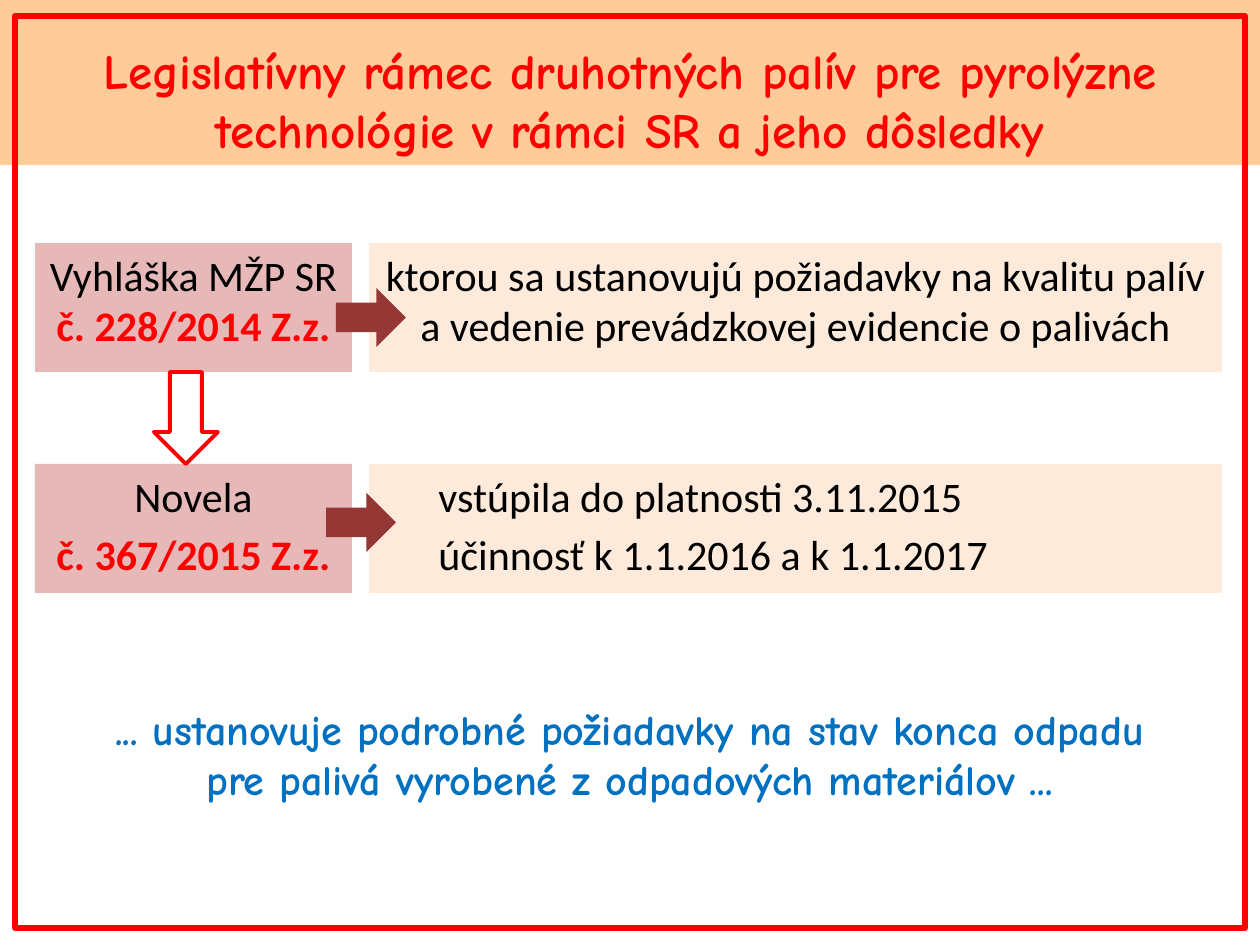
from dataclasses import dataclass

from lxml.etree import SubElement
from pptx import Presentation
from pptx.dml.color import RGBColor
from pptx.enum.shapes import MSO_SHAPE
from pptx.enum.text import MSO_ANCHOR, MSO_AUTO_SIZE, PP_ALIGN
from pptx.oxml.ns import qn
from pptx.util import Inches, Pt


@dataclass(frozen=True)
class Theme:
    red: str = "FF0000"
    blue: str = "0070C0"
    black: str = "000000"
    peach: str = "FFCC99"
    rose: str = "E6B9B8"
    cream: str = "FDEADA"
    brown: str = "953735"
    sans: str = "Calibri"
    comic: str = "Comic Neue"
    head: int = 28
    body: int = 24


LOOK = Theme()
PLAIN = dict(name=LOOK.sans, size=Pt(LOOK.body), bold=False, color=LOOK.black)
STRONG = PLAIN | dict(bold=True, color=LOOK.red)
TITLE = dict(name=LOOK.comic, size=Pt(LOOK.head), bold=True, color=LOOK.red)
NOTE = TITLE | dict(size=Pt(LOOK.body), color=LOOK.blue)

ROWS = (243, 464)
ACT_X, ACT_W = 35, 317
INFO_X, INFO_W = 369, 853
BOX_H = 129


def px(num):
    return round(num * Inches(1) / 126)


def place(shape, *box):
    for key, num in zip(("left", "top", "width", "height"), box):
        setattr(shape, key, px(num))


def paint(shape, color):
    shape.fill.solid()
    shape.fill.fore_color.rgb = RGBColor.from_string(color)


def style(font, form):
    for key, val in form.items():
        if key == "color":
            font.color.rgb = RGBColor.from_string(val)
        else:
            setattr(font, key, val)


def write(shape, paras, align=PP_ALIGN.CENTER, anchor=MSO_ANCHOR.TOP,
          before=4.8, indent=0):
    """Fill the shape with paragraphs, each a list of (text, format) runs."""
    frame = shape.text_frame
    form = dict(word_wrap=True, auto_size=MSO_AUTO_SIZE.NONE,
                vertical_anchor=anchor)
    for key, val in form.items():
        setattr(frame, key, val)
    for num, runs in enumerate(paras):
        para = frame.add_paragraph() if num else frame.paragraphs[0]
        para.alignment = align
        para.space_before = Pt(before)
        props = para._p.get_or_add_pPr()
        props.set("marL", str(px(indent)))
        props.set("indent", "0")
        SubElement(props, qn("a:buNone"))
        for text, look in runs:
            run = para.add_run()
            run.text = text
            style(run.font, look)


def add_form(slide, kind, box, fill=None, line=None, width=0):
    shape = slide.shapes.add_shape(kind, *map(px, box))
    shape.shadow.inherit = False
    if fill:
        paint(shape, fill)
    else:
        shape.fill.background()
    if line:
        shape.line.color.rgb = RGBColor.from_string(line)
        shape.line.width = Pt(width)
    else:
        shape.line.fill.background()
    return shape


def add_box(slide, box, fill, paras, **form):
    shape = add_form(slide, MSO_SHAPE.RECTANGLE, box, fill)
    write(shape, paras, **form)


def add_note(slide, box, text):
    write(slide.shapes.add_textbox(*map(px, box)), [[(text, NOTE)]])


def main():
    deck = Presentation()
    deck.slide_width, deck.slide_height = px(1260), px(945)
    slide = deck.slides.add_slide(deck.slide_layouts[1])
    title, act = slide.placeholders

    place(title, 0, 0, 1260, 165)
    paint(title, LOOK.peach)
    write(title, [[("Legislatívny rámec druhotných palív pre pyrolýzne "
                    "technológie v rámci SR a jeho dôsledky", TITLE)]],
          anchor=MSO_ANCHOR.BOTTOM, before=6)

    place(act, ACT_X, ROWS[0], ACT_W, BOX_H)
    paint(act, LOOK.rose)
    write(act, [[("Vyhláška MŽP SR ", PLAIN), ("č. 228/2014 Z.z.", STRONG)]])

    add_form(slide, MSO_SHAPE.RECTANGLE, (15, 16, 1230, 912),
             line=LOOK.red, width=3)
    add_box(slide, (ACT_X, ROWS[1], ACT_W, BOX_H), LOOK.rose,
            [[("Novela", PLAIN)], [("č. 367/2015 Z.z.", STRONG)]])
    add_box(slide, (INFO_X, ROWS[0], INFO_W, BOX_H), LOOK.cream,
            [[("ktorou sa ustanovujú požiadavky na kvalitu palív "
               "a vedenie prevádzkovej evidencie o palivách", PLAIN)]])
    add_box(slide, (INFO_X, ROWS[1], INFO_W, BOX_H), LOOK.cream,
            [[("vstúpila do platnosti 3.11.2015", PLAIN)],
             [("účinnosť k 1.1.2016 a k 1.1.2017", PLAIN)]],
            align=PP_ALIGN.LEFT, indent=57)
    add_note(slide, (74, 697, 1111, 129),
             "... ustanovuje podrobné požiadavky na stav konca odpadu "
             "pre palivá vyrobené z odpadových materiálov ...")

    for left, top in ((336, 288), (326, 493)):
        add_form(slide, MSO_SHAPE.RIGHT_ARROW, (left, top, 70, 59), LOOK.brown)
    add_form(slide, MSO_SHAPE.DOWN_ARROW, (154, 372, 64, 92),
             line=LOOK.red, width=2.25)

    deck.save("out.pptx")


if __name__ == "__main__":
    main()
